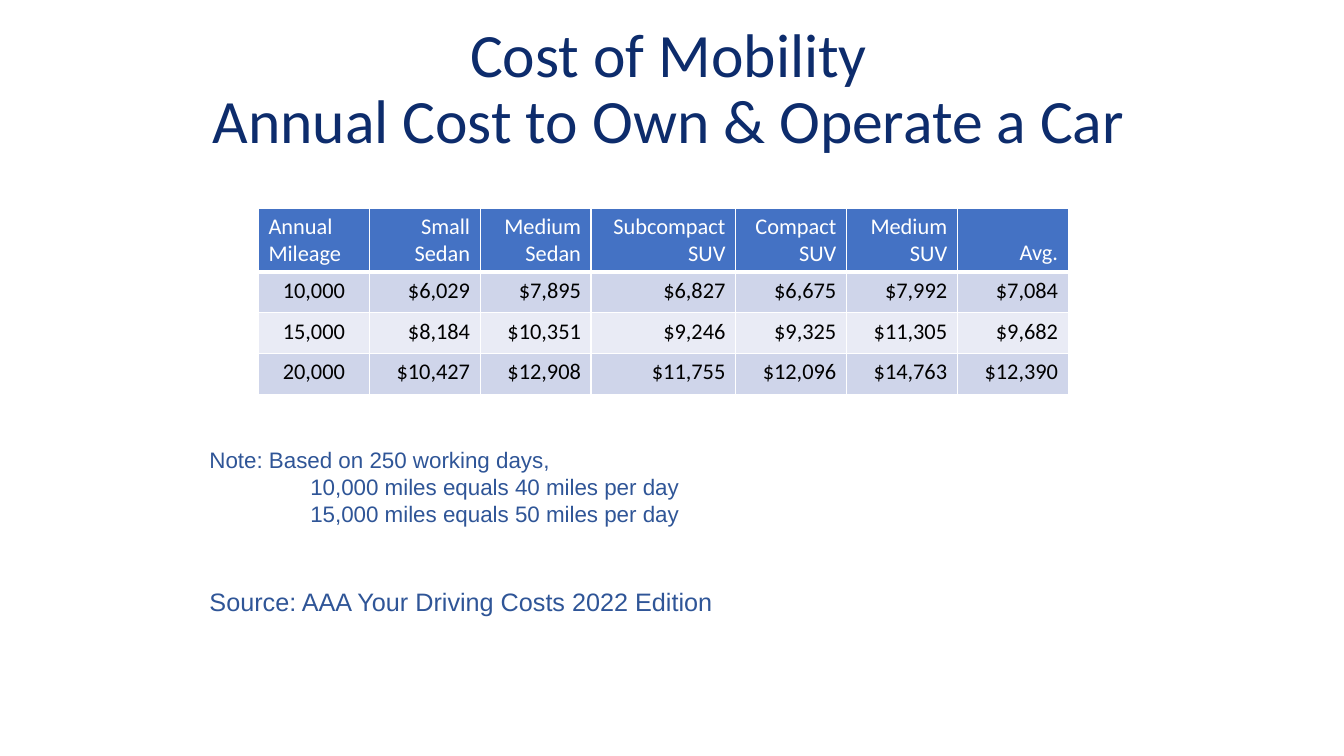
from dataclasses import dataclass

from lxml.etree import SubElement
from pptx import Presentation
from pptx.dml.color import RGBColor
from pptx.enum.text import MSO_ANCHOR, PP_ALIGN
from pptx.oxml.ns import qn
from pptx.util import Pt

# Content
TITLE = ["Cost of Mobility\nAnnual Cost to Own & Operate a Car"]
HEADINGS = [
    ["Annual", "Mileage"], ["Small Sedan"], ["Medium", "Sedan"],
    ["Subcompact", "SUV"], ["Compact", "SUV"], ["Medium", "SUV"], ["Avg."],
]
COSTS = [
    ("10,000", "$6,029", "$7,895", "$6,827", "$6,675", "$7,992", "$7,084"),
    ("15,000", "$8,184", "$10,351", "$9,246", "$9,325", "$11,305", "$9,682"),
    ("20,000", "$10,427", "$12,908", "$11,755", "$12,096", "$14,763", "$12,390"),
]
NOTE = [
    "Note: Based on 250 working days,",
    "10,000 miles equals 40 miles per day",
    "15,000 miles equals 50 miles per day",
]
SOURCE = ["Source: AAA Your Driving Costs 2022 Edition"]


@dataclass(frozen=True)
class Theme:
    heading_font: str = "Calibri"
    note_font: str = "Arial"
    navy: str = "0D2C6C"
    blue: str = "2F5597"
    header: str = "4472C4"
    bands: tuple = ("CFD5EA", "E9EBF5")
    white: str = "FFFFFF"
    black: str = "000000"
    title_size: int = 44
    source_size: int = 18
    body_size: int = 16


THEME = Theme()
LEFT = 142.56
COLUMN_WIDTHS = [79.2 if "Subcompact" not in heading else 103.2 for heading in HEADINGS]
ROW_HEIGHTS = [45.5] + [29.2] * len(COSTS)


def write(frame, lines, font, size, color, align=PP_ALIGN.LEFT, spacing=None, indent=0):
    """Write one paragraph per line; indent applies after the first line."""
    frame.word_wrap = True
    for number, line in enumerate(lines):
        paragraph = frame.paragraphs[0] if number == 0 else frame.add_paragraph()
        paragraph.text = line
        paragraph.alignment = align
        if spacing:
            paragraph.line_spacing = spacing
        if indent and number:
            paragraph._p.get_or_add_pPr().set("marL", str(Pt(indent)))
        for run in paragraph.runs:
            run.font.name = font
            run.font.size = Pt(size)
            run.font.bold = False
            run.font.color.rgb = RGBColor.from_string(color)


def add_text(slide, box, lines, anchor=MSO_ANCHOR.TOP, **text_format):
    frame = slide.shapes.add_textbox(*map(Pt, box)).text_frame
    frame.vertical_anchor = anchor
    write(frame, lines, **text_format)


def add_borders(cell, bottom):
    properties = cell._tc.get_or_add_tcPr()
    for side, width in (("L", 1), ("R", 1), ("T", 1), ("B", bottom)):
        line = SubElement(properties, qn(f"a:ln{side}"), w=str(Pt(width)))
        fill = SubElement(line, qn("a:solidFill"))
        SubElement(fill, qn("a:srgbClr"), val=THEME.white)


def add_cost_table(slide):
    rows = [HEADINGS] + [[[value] for value in row] for row in COSTS]
    table = slide.shapes.add_table(
        len(rows), len(HEADINGS), Pt(184.6), Pt(148.5),
        Pt(sum(COLUMN_WIDTHS)), Pt(sum(ROW_HEIGHTS)),
    ).table
    for column, width in zip(table.columns, COLUMN_WIDTHS):
        column.width = Pt(width)
    for r, (row, height) in enumerate(zip(rows, ROW_HEIGHTS)):
        table.rows[r].height = Pt(height)
        is_header = r == 0
        mileage_align = PP_ALIGN.LEFT if is_header else PP_ALIGN.CENTER
        background = THEME.header if is_header else THEME.bands[(r - 1) % 2]
        for c, lines in enumerate(row):
            cell = table.cell(r, c)
            add_borders(cell, bottom=3 if is_header else 1)
            cell.fill.solid()
            cell.fill.fore_color.rgb = RGBColor.from_string(background)
            cell.vertical_anchor = MSO_ANCHOR.BOTTOM if is_header else MSO_ANCHOR.TOP
            write(cell.text_frame, lines, THEME.heading_font, THEME.body_size,
                  THEME.white if is_header else THEME.black,
                  align=PP_ALIGN.RIGHT if c else mileage_align)


def main():
    deck = Presentation()
    deck.slide_width, deck.slide_height = Pt(960), Pt(540)
    slide = deck.slides.add_slide(deck.slide_layouts[6])

    # Title
    add_text(slide, (LEFT, 19.5, 670.3, 90.7), TITLE, anchor=MSO_ANCHOR.MIDDLE,
             font=THEME.heading_font, size=THEME.title_size, color=THEME.navy,
             align=PP_ALIGN.CENTER, spacing=0.9)

    # Source, cost table and note
    add_text(slide, (LEFT, 415.4, 378, 29), SOURCE, font=THEME.note_font,
             size=THEME.source_size, color=THEME.blue)
    add_cost_table(slide)
    add_text(slide, (LEFT, 315.4, 662.4, 65.5), NOTE, font=THEME.note_font,
             size=THEME.body_size, color=THEME.blue, indent=72)

    deck.save("out.pptx")


if __name__ == "__main__":
    main()
